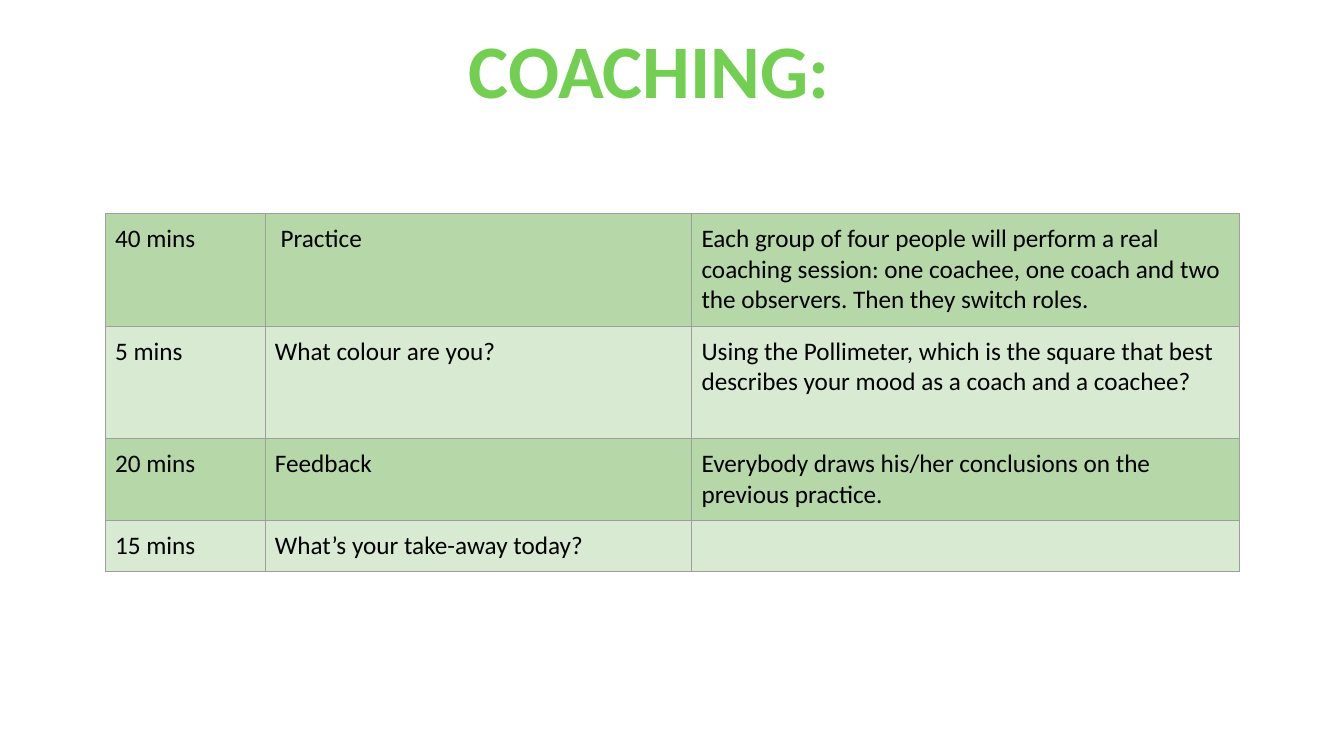
from pptx import Presentation
from pptx.dml.color import RGBColor
from pptx.enum.text import MSO_ANCHOR, MSO_AUTO_SIZE, PP_ALIGN
from pptx.oxml import parse_xml
from pptx.oxml.ns import nsdecls
from pptx.util import Cm, Pt

TITLE = "COACHING:"
AGENDA = [
    ("40 mins", " Practice",
     "Each group of four people will perform a real coaching session: one coachee, "
     "one coach and two the observers. Then they switch roles."),
    ("5 mins", "What colour are you?",
     "Using the Pollimeter, which is the square that best describes your mood "
     "as a coach and a coachee?"),
    ("20 mins", "Feedback",
     "Everybody draws his/her conclusions on the previous practice."),
    ("15 mins", "What’s your take-away today?", ""),
]
COL_WIDTHS = [4.03, 10.75, 13.8]
ROW_HEIGHTS = [2.84, 2.84, 2.06, 1.28]
COLORS = {"title": "72CF51", "text": "000000", "border": "9E9E9E",
          "dark": "B6D7A8", "light": "D9EAD3"}
FONT = "Calibri"


def write(tf, text, size=18, color="text", bold=False, align=PP_ALIGN.LEFT, spacing=1.0):
    p = tf.paragraphs[0]
    p.alignment = align
    p.line_spacing = spacing
    r = p.add_run()
    r.text = text
    r.font.name = FONT
    r.font.size = Pt(size)
    r.font.bold = bold
    r.font.color.rgb = RGBColor.from_string(COLORS[color])


def add_borders(cell, color, width=0.75):
    tcPr = cell._tc.get_or_add_tcPr()
    for i, side in enumerate(("lnL", "lnR", "lnT", "lnB")):
        tcPr.insert(i, parse_xml(
            f'<a:{side} {nsdecls("a")} w="{Pt(width)}"><a:solidFill>'
            f'<a:srgbClr val="{COLORS[color]}"/></a:solidFill></a:{side}>'))


def main():
    prs = Presentation()
    prs.slide_width, prs.slide_height = Cm(33.87), Cm(19.05)
    s = prs.slides.add_slide(prs.slide_layouts[5])

    # Title
    title = s.shapes.title
    title.left, title.top, title.width, title.height = Cm(3.66), Cm(1.4), Cm(25.4), Cm(1.63)
    tf = title.text_frame
    tf.auto_size = MSO_AUTO_SIZE.NONE
    tf.vertical_anchor = MSO_ANCHOR.BOTTOM
    write(tf, TITLE, size=54, color="title", bold=True, align=PP_ALIGN.CENTER, spacing=0.9)

    # Agenda table
    table = s.shapes.add_table(len(AGENDA), len(COL_WIDTHS), Cm(2.65), Cm(5.38),
                               Cm(sum(COL_WIDTHS)), Cm(sum(ROW_HEIGHTS))).table
    table.first_row = table.horz_banding = False
    for col, width in zip(table.columns, COL_WIDTHS):
        col.width = Cm(width)
    for i, (row, height, texts) in enumerate(zip(table.rows, ROW_HEIGHTS, AGENDA)):
        row.height = Cm(height)
        for cell, text in zip(row.cells, texts):
            cell.margin_left = cell.margin_right = Cm(0.25)
            cell.margin_top = cell.margin_bottom = Cm(0.25)
            cell.fill.solid()
            cell.fill.fore_color.rgb = RGBColor.from_string(COLORS["light" if i % 2 else "dark"])
            add_borders(cell, "border")
            if text:
                write(cell.text_frame, text)

    prs.save("out.pptx")


if __name__ == "__main__":
    main()
